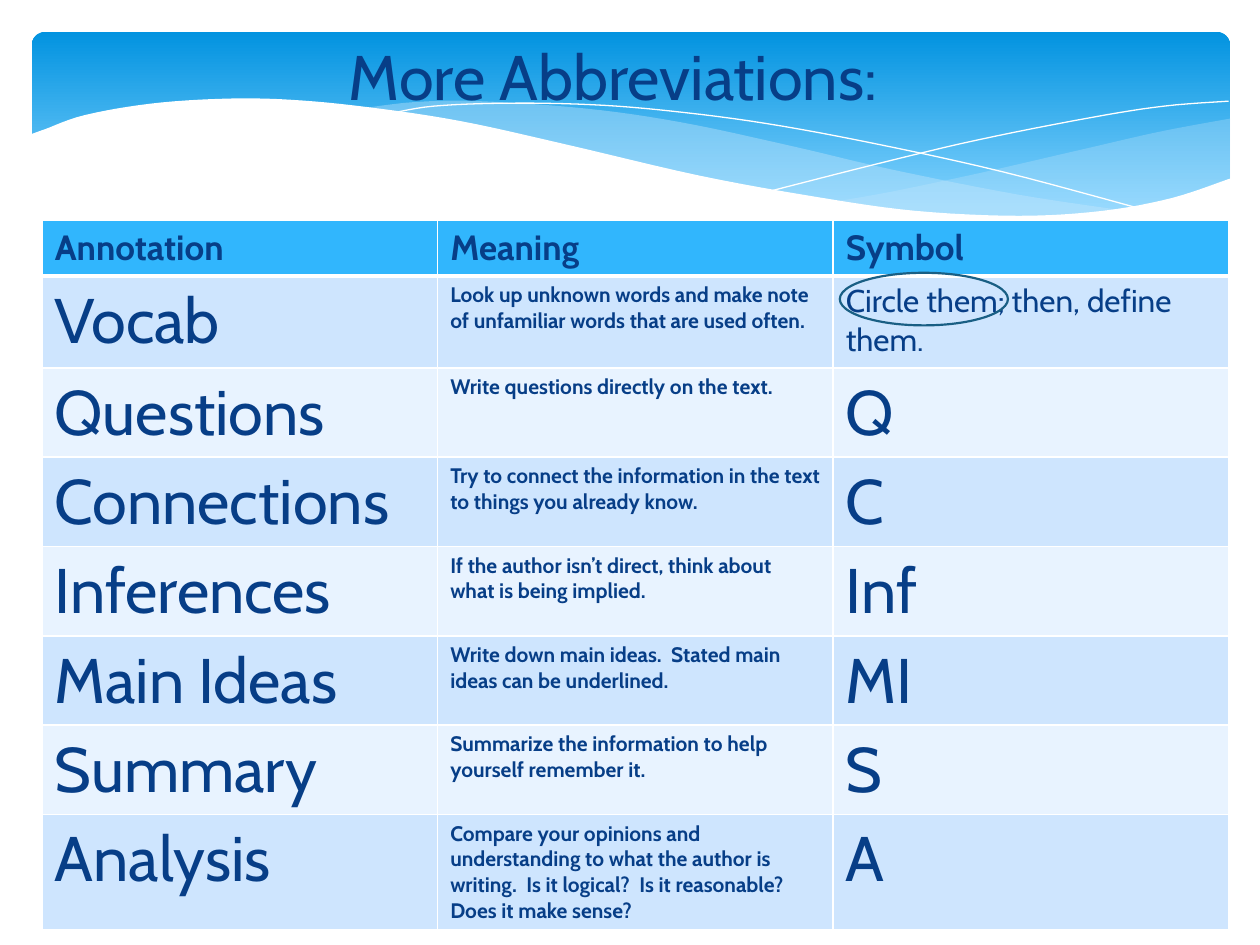
from lxml.etree import SubElement
from pptx import Presentation
from pptx.dml.color import RGBColor
from pptx.enum.shapes import MSO_SHAPE as Shape
from pptx.oxml.ns import qn
from pptx.util import Cm, Pt

COLORS = {
    "ink": "073E87",
    "header": "31B6FD",
    "odd_row": "CEE5FE",
    "even_row": "E8F3FF",
    "sky_top": "0293E0",
    "sky_bottom": "83D3FE",
    "mist": "C6E7FC",
    "white": "FFFFFF",
    "circle": "195F84",
}
HEADINGS = ("Annotation", "Meaning", "Symbol")
ENTRIES = [
    ("Vocab", "Look up unknown words and make note of unfamiliar words that are used often.",
     "Circle them; then, define them."),
    ("Questions", "Write questions directly on the text.", "Q"),
    ("Connections", "Try to connect the information in the text to things you already know.", "C"),
    ("Inferences", "If the author isn’t direct, think about what is being implied.", "Inf"),
    ("Main Ideas", "Write down main ideas.  Stated main ideas can be underlined.", "MI"),
    ("Summary", "Summarize the information to help yourself remember it.", "S"),
    ("Analysis", "Compare your opinions and understanding to what the author is writing.  "
     "Is it logical?  Is it reasonable?  Does it make sense?", "A"),
]
ROW_HEIGHTS = [1.09, 1.85] + [1.8] * 5 + [2.29]

RIGHT_MIST_TOP = [(24.16, 1.75), (22.76, 2.01), (21.23, 2.36), (19.15, 2.84),
                  (17.3, 3.23), (16.15, 3.43)]
RIGHT_MIST_BOTTOM = [(16.15, 3.43), (17.63, 3.61), (19.2, 3.73), (20.57, 3.73),
                     (21.95, 3.58), (23.11, 3.33), (24.16, 2.95)]
LONG_MIST_TOP = [(22.05, 3.61), (19.86, 3.28), (17.3, 2.77), (15.34, 2.31), (13.11, 1.83),
                 (11.18, 1.55), (9.02, 1.4), (7.7, 1.42), (6.63, 1.55)]
LONG_MIST_BOTTOM = [(6.63, 1.55), (8.56, 1.83), (10.77, 2.31), (12.83, 2.79), (14.63, 3.18),
                    (16.64, 3.51), (18.36, 3.68), (20.14, 3.76), (21.13, 3.71), (22.05, 3.61)]
FALLING_LINE = [(7.21, 1.65), (8.1, 1.5), (9.55, 1.44), (11.28, 1.47), (12.9, 1.6),
                (14.81, 1.85), (17.02, 2.26), (19.56, 2.82), (22.4, 3.58)]
RISING_LINE = [(14.94, 3.2), (17.02, 2.67), (19.08, 2.18), (21.36, 1.73), (22.83, 1.5),
               (24.13, 1.4)]
WHITE_WAVE = [(24.18, 2.95), (22.99, 3.35), (21.59, 3.61), (19.91, 3.71), (17.81, 3.61),
              (15.82, 3.33), (13.46, 2.9), (10.72, 2.26), (8.64, 1.8), (6.78, 1.52),
              (5.21, 1.37), (3.86, 1.35), (2.39, 1.45), (1.07, 1.68), (0.28, 1.96),
              (-0.05, 2.08)]
WHITE_CORNERS = [(-0.05, 5.05), (24.18, 5.05)]


def rgb(name):
    return RGBColor.from_string(COLORS[name])


def paint(shape, fill=None, line=None, width=0, opacity=None):
    shape.shadow.inherit = False
    if fill:
        shape.fill.solid()
        shape.fill.fore_color.rgb = rgb(fill)
    else:
        shape.fill.background()
    if opacity:
        color = shape.fill._xPr.find(qn("a:solidFill"))[0]
        SubElement(color, qn("a:alpha"), val=str(opacity * 1000))
    if line:
        shape.line.color.rgb = rgb(line)
        shape.line.width = Pt(width)
    else:
        shape.line.fill.background()


def write(text_frame, text, **font_format):
    run = text_frame.paragraphs[0].add_run()
    run.text = text
    run.font.color.rgb = rgb("ink")
    for name, value in {"name": "Cabin", **font_format}.items():
        setattr(run.font, name, value)


def smooth(points, steps=6):
    padded = [points[0], *points, points[-1]]
    curve = []
    for before, start, end, after in zip(padded, padded[1:], padded[2:], padded[3:]):
        for step in range(steps):
            t = step / steps
            curve.append(tuple(
                b + t * (c - a) / 2 + t**2 * (a - 2.5 * b + 2 * c - d / 2)
                + t**3 * (3 * (b - c) + d - a) / 2
                for a, b, c, d in zip(before, start, end, after)))
    return curve + [points[-1]]


def add_wave(slide, left, top, points, close=True, **style):
    placed = [(Cm(left + x), Cm(top + y)) for x, y in points]
    builder = slide.shapes.build_freeform(*placed[0])
    builder.add_line_segments(placed[1:], close=close)
    paint(builder.convert_to_shape(), **style)


def add_banner(slide, left, top, width, height):
    sky = slide.shapes.add_shape(Shape.ROUNDED_RECTANGLE, Cm(left), Cm(top), Cm(width), Cm(height))
    paint(sky)
    sky.adjustments[0] = 0.07
    sky.fill.gradient()
    sky.fill.gradient_angle = 270
    stops = zip(sky.fill.gradient_stops, (0, 0.9), ("sky_top", "sky_bottom"))
    for stop, position, color in stops:
        stop.position = position
        stop.color.rgb = rgb(color)
    for upper, lower, opacity in ((RIGHT_MIST_TOP, RIGHT_MIST_BOTTOM, 29),
                                  (LONG_MIST_TOP, LONG_MIST_BOTTOM, 40)):
        add_wave(slide, left, top, smooth(upper) + smooth(lower), fill="mist", opacity=opacity)
    for line in (FALLING_LINE, RISING_LINE):
        add_wave(slide, left, top, smooth(line), close=False, line="white")
    add_wave(slide, left, top, smooth(WHITE_WAVE) + WHITE_CORNERS, fill="white")


def add_title(slide, left, top, width, height):
    box = slide.shapes.add_textbox(Cm(left), Cm(top), Cm(width), Cm(height))
    box.text_frame.word_wrap = True
    write(box.text_frame, "More Abbreviations:", size=Pt(36))


def add_borders(cell, bottom):
    properties = cell._tc.get_or_add_tcPr()
    for side, width in (("L", 1), ("R", 1), ("T", 1), ("B", bottom)):
        line = SubElement(properties, qn(f"a:ln{side}"), w=str(Pt(width)))
        fill = SubElement(line, qn("a:solidFill"))
        SubElement(fill, qn("a:srgbClr"), val=COLORS["white"])


def text_size(row, column, text):
    if row == 0:
        return 20
    if column == 1:
        return 12
    return 18 if len(text) > 12 else 36


def add_annotation_table(slide, left, top, width, height):
    rows = [HEADINGS, *ENTRIES]
    table = slide.shapes.add_table(len(rows), len(HEADINGS), Cm(left), Cm(top),
                                   Cm(width), Cm(height)).table
    for row, (texts, row_height) in enumerate(zip(rows, ROW_HEIGHTS)):
        table.rows[row].height = Cm(row_height)
        color = "header" if row == 0 else "odd_row" if row % 2 else "even_row"
        for column, text in enumerate(texts):
            cell = table.cell(row, column)
            add_borders(cell, 1 if row else 3)
            cell.fill.solid()
            cell.fill.fore_color.rgb = rgb(color)
            write(cell.text_frame, text, size=Pt(text_size(row, column, text)),
                  bold=row == 0 or column == 1)


def add_circle(slide, left, top, width, height):
    circle = slide.shapes.add_shape(Shape.OVAL, Cm(left), Cm(top), Cm(width), Cm(height))
    paint(circle, line="circle", width=1.25)


def main():
    presentation = Presentation()
    presentation.slide_width, presentation.slide_height = Cm(25.4), Cm(19.05)
    slide = presentation.slides.add_slide(presentation.slide_layouts[6])
    add_banner(slide, 0.64, 0.64, 24.16, 3.96)
    add_annotation_table(slide, 0.85, 4.45, 23.92, sum(ROW_HEIGHTS))
    add_title(slide, 6.78, 0.64, 11.63, 1.8)
    add_circle(slide, 16.93, 5.5, 3.39, 1.06)
    presentation.save("out.pptx")


if __name__ == "__main__":
    main()
